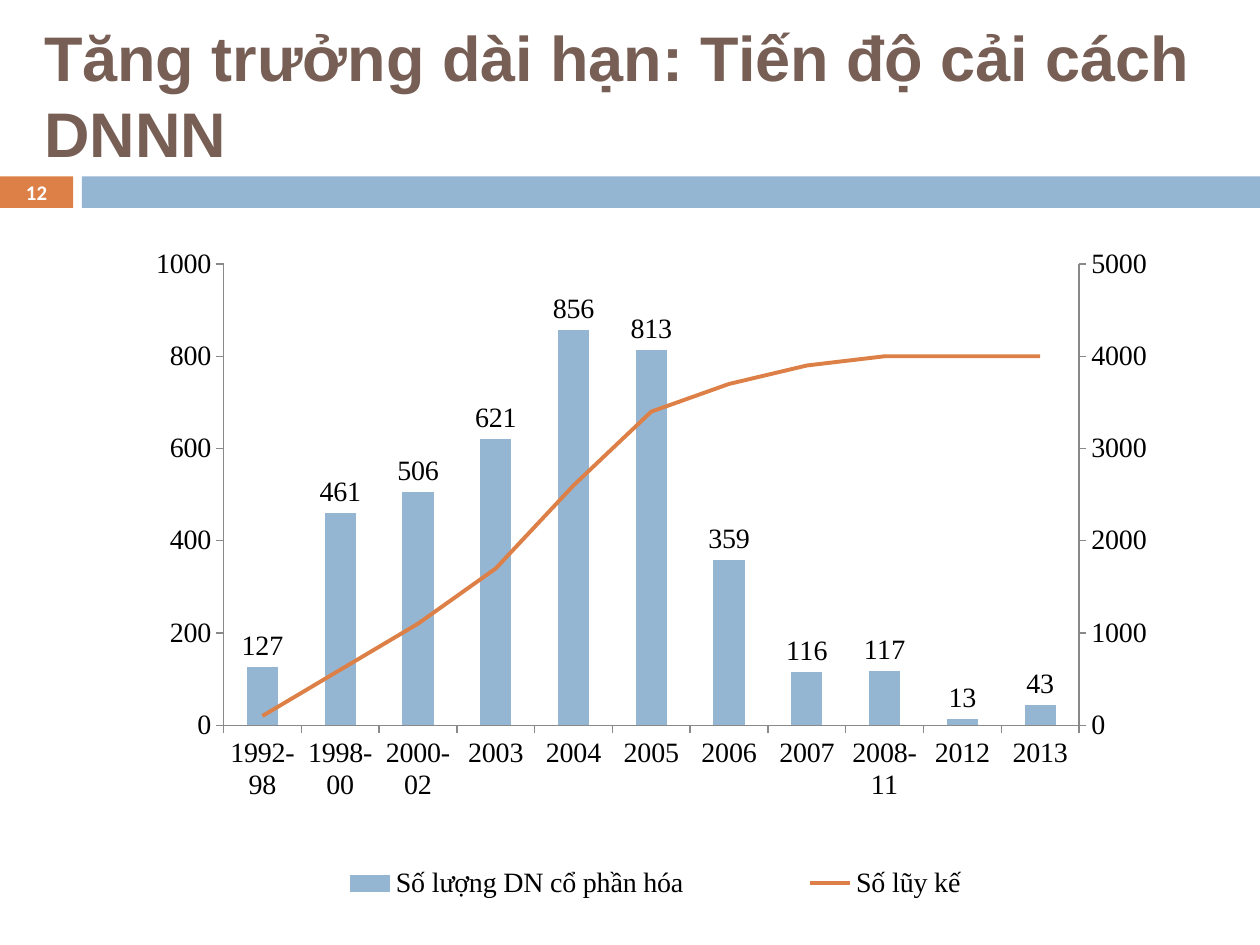
from copy import deepcopy

from pptx import Presentation
from pptx.chart.data import CategoryChartData
from pptx.dml.color import RGBColor
from pptx.enum.chart import (XL_CHART_TYPE, XL_LABEL_POSITION, XL_LEGEND_POSITION,
                             XL_MARKER_STYLE, XL_TICK_MARK)
from pptx.enum.shapes import MSO_SHAPE
from pptx.enum.text import MSO_ANCHOR, MSO_AUTO_SIZE, PP_ALIGN
from pptx.oxml import parse_xml
from pptx.oxml.ns import nsdecls, qn
from pptx.util import Inches, Pt

BLUE, ORANGE, BROWN, GRAY = "94B6D2", "DD8047", "775F55", "898989"
PERIODS = ["1992-98", "1998-00", "2000-02", "2003", "2004", "2005",
           "2006", "2007", "2008-11", "2012", "2013"]
EQUITIZED = [127, 461, 506, 621, 856, 813, 359, 116, 117, 13, 43]
CUMULATIVE = [100, 600, 1100, 1700, 2600, 3400, 3700, 3900, 4000, 4000, 4000]


def color(value):
    return RGBColor.from_string(value)


def set_font(font, name, size, hex_color, bold=False):
    font.name, font.size, font.bold = name, Pt(size), bold
    font.color.rgb = color(hex_color)


def add_title(slide, text, box):
    title = slide.shapes.title
    title.left, title.top, title.width, title.height = map(Inches, box)
    tf = title.text_frame
    tf.text = text
    tf.word_wrap, tf.auto_size = True, MSO_AUTO_SIZE.NONE
    tf.vertical_anchor = MSO_ANCHOR.MIDDLE
    p = tf.paragraphs[0]
    p.alignment = PP_ALIGN.LEFT
    set_font(p.font, "Arial", 36, BROWN, True)


def add_band(slide, number, box):
    """Draw the number tab and the bar to its right, filling the box."""
    x, y, w, h = box
    tab, bar_start = 0.058 * w, 0.065 * w
    for left, width, fill in ((x, tab, ORANGE), (x + bar_start, w - bar_start, BLUE)):
        sp = slide.shapes.add_shape(MSO_SHAPE.RECTANGLE, *map(Inches, (left, y, width, h)))
        sp.shadow.inherit = False
        sp.fill.solid()
        sp.fill.fore_color.rgb = color(fill)
        sp.line.fill.background()
    tf = slide.shapes.add_textbox(*map(Inches, (x, y, tab, h))).text_frame
    tf.word_wrap, tf.vertical_anchor = True, MSO_ANCHOR.MIDDLE
    tf.margin_top = tf.margin_bottom = 0
    p = tf.paragraphs[0]
    p.text, p.alignment = number, PP_ALIGN.CENTER
    set_font(p.font, "Calibri", 11.9, "FFFFFF", True)


def set_layout(element, x, y, w, h, inner=False):
    """Give a plot area or legend its place as shares of the chart."""
    for old in element.findall(qn("c:layout")):
        element.remove(old)
    target = '<c:layoutTarget val="inner"/>' if inner else ""
    layout = parse_xml(
        f'<c:layout {nsdecls("c")}><c:manualLayout>{target}'
        '<c:xMode val="edge"/><c:yMode val="edge"/>'
        f'<c:x val="{x}"/><c:y val="{y}"/><c:w val="{w}"/><c:h val="{h}"/>'
        '</c:manualLayout></c:layout>')
    if inner:
        element.insert(0, layout)
    else:
        element.find(qn("c:legendPos")).addnext(layout)


def format_axis(axis):
    axis.has_major_gridlines = False
    axis.major_tick_mark = XL_TICK_MARK.OUTSIDE
    axis.minor_tick_mark = XL_TICK_MARK.NONE
    axis.format.line.color.rgb = color(GRAY)
    axis.format.line.width = Pt(0.75)


def move_to_right_axis(chart, maximum, major):
    """Turn the last bar series into a line on a second value axis."""
    area = chart.plots[0]._element.getparent()
    bars = area.find(qn("c:barChart"))
    ser = bars.findall(qn("c:ser"))[-1]
    for old in ser.findall(qn("c:invertIfNegative")):
        ser.remove(old)
    line = parse_xml(
        f'<c:lineChart {nsdecls("c")}><c:grouping val="standard"/><c:varyColors val="0"/>'
        '<c:marker val="1"/><c:axId val="5001"/><c:axId val="5002"/></c:lineChart>')
    line.insert(2, ser)
    bars.addnext(line)

    left = area.find(qn("c:valAx"))
    hidden, right = deepcopy(area.find(qn("c:catAx"))), deepcopy(left)
    left.addnext(right)
    right.addnext(hidden)
    for axis, own, other in ((hidden, "5001", "5002"), (right, "5002", "5001")):
        axis.find(qn("c:axId")).set("val", own)
        axis.find(qn("c:crossAx")).set("val", other)
    hidden.find(qn("c:delete")).set("val", "1")
    right.find(qn("c:axPos")).set("val", "r")
    right.find(qn("c:crosses")).set("val", "max")
    right.find(qn("c:scaling")).find(qn("c:max")).set("val", str(maximum))
    right.find(qn("c:majorUnit")).set("val", str(major))


def add_progress_chart(slide, box):
    data = CategoryChartData(number_format="General")
    data.categories = PERIODS
    data.add_series("Số lượng DN cổ phần hóa", EQUITIZED)
    data.add_series("Số lũy kế", CUMULATIVE)
    chart = slide.shapes.add_chart(
        XL_CHART_TYPE.COLUMN_CLUSTERED, *map(Inches, box), data).chart
    set_font(chart.font, "Times New Roman", 16, "000000")
    chart.has_title = False

    value_axis = chart.value_axis
    value_axis.minimum_scale, value_axis.maximum_scale = 0, 1000
    value_axis.major_unit = 200
    for axis in (chart.category_axis, value_axis):
        format_axis(axis)

    plot = chart.plots[0]
    plot.gap_width, plot.vary_by_categories = 150, False
    bars = plot.series[0]
    bars.format.fill.solid()
    bars.format.fill.fore_color.rgb = color(BLUE)
    labels = bars.data_labels
    labels.show_value, labels.position = True, XL_LABEL_POSITION.OUTSIDE_END

    move_to_right_axis(chart, 5000, 1000)
    total = chart.plots[1].series[0]
    total.smooth = False
    total.format.line.color.rgb = color(ORANGE)
    total.format.line.width = Pt(2.25)
    total.marker.style = XL_MARKER_STYLE.NONE

    chart.has_legend = True
    chart.legend.position = XL_LEGEND_POSITION.BOTTOM
    chart.legend.include_in_layout = False
    set_layout(chart.legend._element, 0.124, 0.903, 0.76, 0.08)
    set_layout(plot._element.getparent(), 0.116, 0.062, 0.769, 0.656, inner=True)


def main():
    prs = Presentation()
    prs.slide_width, prs.slide_height = Inches(10), Inches(7.5)
    slide = prs.slides.add_slide(prs.slide_layouts[5])
    add_title(slide, "Tăng trưởng dài hạn: Tiến độ cải cách DNNN", (0.25, 0.25, 9.42, 1))
    add_band(slide, "12", (0, 1.4, 10, 0.25))
    add_progress_chart(slide, (0.75, 1.75, 8.83, 5.58))
    prs.save("out.pptx")


if __name__ == "__main__":
    main()
